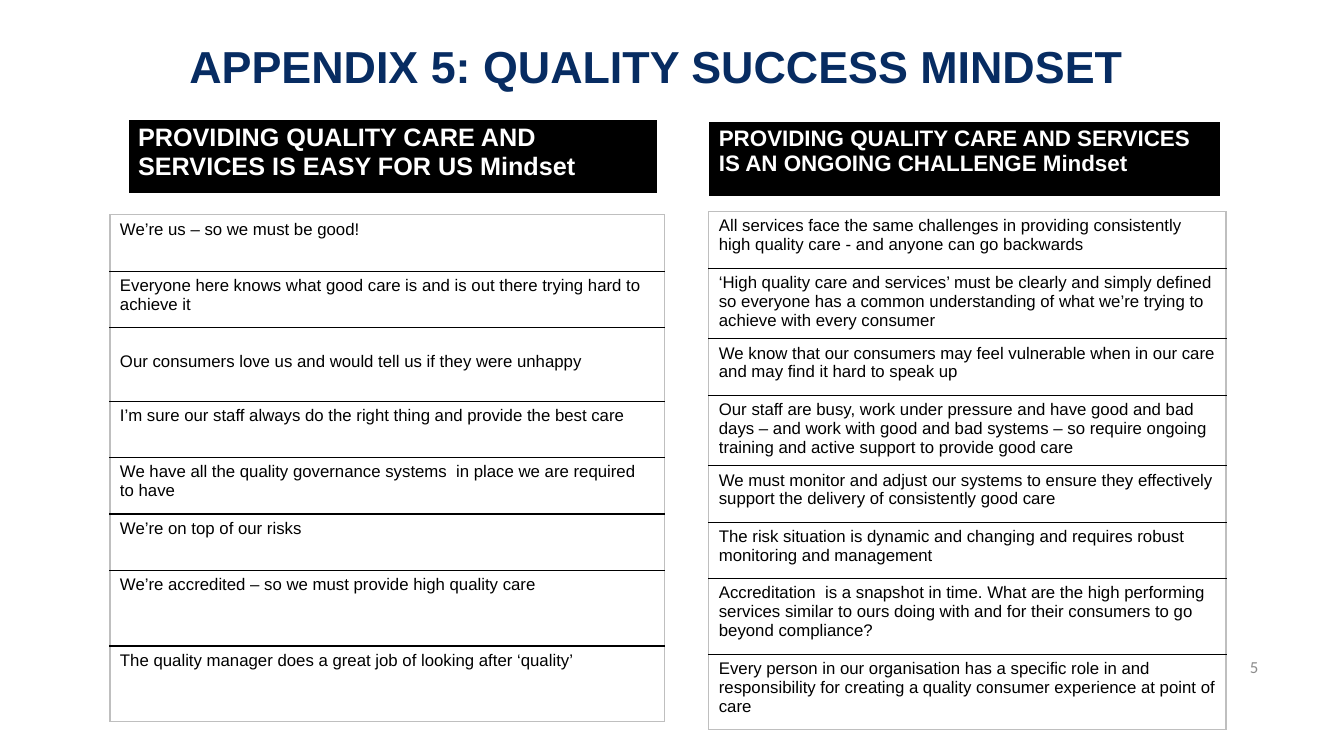
import pptx
import pptx.dml.color
import pptx.enum.text
import pptx.oxml.ns
import pptx.util
from lxml import etree

PX = 9144  # one px is a hundredth of an inch
BLACK, WHITE, GREY, NAVY = "000000", "FFFFFF", "BFBFBF", "072C62"
ALIGN = pptx.enum.text.PP_ALIGN
ANCHOR = pptx.enum.text.MSO_ANCHOR

EASY_MINDSET = [
    (56, "We’re us – so we must be good!"),
    (56, "Everyone here knows what good care is and is out there trying hard to achieve it"),
    (73, "Our consumers love us and would tell us if they were unhappy"),
    (56, "I’m sure our staff always do the right thing and provide the best care"),
    (56, "We have all the quality governance systems  in place we are required to have"),
    (56, "We’re on top of our risks"),
    (75, "We’re accredited – so we must provide high quality care"),
    (75, "The quality manager does a great job of looking after ‘quality’"),
]
CHALLENGE_MINDSET = [
    (56, "All services face the same challenges in providing consistently high quality care "
         "- and anyone can go backwards"),
    (56, "‘High quality care and services’ must be clearly and simply defined so everyone has "
         "a common understanding of what we’re trying to achieve with every consumer"),
    (56, "We know that our consumers may feel vulnerable when in our care and may find it hard "
         "to speak up"),
    (67, "Our staff are busy, work under pressure and have good and bad days – and work with "
         "good and bad systems – so require ongoing training and active support to provide "
         "good care"),
    (56, "We must monitor and adjust our systems to ensure they effectively support the "
         "delivery of consistently good care"),
    (56, "The risk situation is dynamic and changing and requires robust monitoring and "
         "management"),
    (75, "Accreditation  is a snapshot in time. What are the high performing services similar "
         "to ours doing with and for their consumers to go beyond compliance?"),
    (75, "Every person in our organisation has a specific role in and responsibility for "
         "creating a quality consumer experience at point of care"),
]


def rgb(colour):
    return pptx.dml.color.RGBColor.from_string(colour)


def emu(box):
    return [length * PX for length in box]


def write(frame, text, size, colour, align=ALIGN.LEFT, **font_format):
    paragraph = frame.paragraphs[0]
    paragraph.alignment = align
    run = paragraph.add_run()
    run.text = text
    font_format = {"name": "Arial", "size": pptx.util.Pt(size), **font_format}
    for attribute, value in font_format.items():
        setattr(run.font, attribute, value)
    run.font.color.rgb = rgb(colour)


def add_label(slide, box, text, size, colour, align, **font_format):
    frame = slide.shapes.add_textbox(*emu(box)).text_frame
    frame.word_wrap = True
    frame.vertical_anchor = ANCHOR.MIDDLE
    write(frame, text, size, colour, align, **font_format)


def set_borders(cell, borders):
    """Takes (colour, points) for the left, right, top and bottom sides."""
    properties = cell._tc.get_or_add_tcPr()
    qn = pptx.oxml.ns.qn
    for side, (colour, width) in zip("LRTB", borders):
        line = etree.SubElement(properties, qn(f"a:ln{side}"), w=str(pptx.util.Pt(width)))
        fill = etree.SubElement(line, qn("a:solidFill"))
        etree.SubElement(fill, qn("a:srgbClr"), val=colour)


def add_column(slide, box, row_heights):
    """Adds a plain table of one column and returns its cells."""
    table = slide.shapes.add_table(len(row_heights), 1, *emu(box)).table
    for flag in ("first_row", "horz_banding"):
        setattr(table, flag, False)
    for row, height in zip(table.rows, row_heights):
        row.height = height * PX
    return [row.cells[0] for row in table.rows]


def add_heading(slide, box, text, size):
    [cell] = add_column(slide, box, [box[3]])
    set_borders(cell, [(WHITE, 1)] * 3 + [(WHITE, 3)])
    cell.fill.solid()
    cell.fill.fore_color.rgb = rgb(BLACK)
    write(cell.text_frame, text, size, WHITE, bold=True)


def add_statements(slide, left, top, width, statements, lowered_row=None):
    heights = [height for height, _ in statements]
    cells = add_column(slide, (left, top, width, sum(heights)), heights)
    last = len(cells) - 1
    outer, inner = (GREY, 1), (BLACK, 1)
    for index, (cell, (_, text)) in enumerate(zip(cells, statements)):
        set_borders(cell, [outer, outer,
                           outer if index == 0 else inner,
                           outer if index == last else inner])
        cell.fill.background()
        if index == lowered_row:
            cell.margin_top = 24 * PX  # starts one line lower
        write(cell.text_frame, text, 12, BLACK)


def build_mindset_slide(presentation):
    slide = presentation.slides.add_slide(presentation.slide_layouts[6])

    # Page number
    add_label(slide, (1198, 642, 60, 40), "5", 12, "8C8C8C", ALIGN.RIGHT, name="Calibri")

    # Left: the easy mindset
    add_statements(slide, 109, 213, 550, EASY_MINDSET, lowered_row=2)
    add_heading(slide, (127, 118, 525, 75),
                "PROVIDING QUALITY CARE AND SERVICES IS EASY FOR US Mindset", 18)

    # Right: the ongoing challenge mindset
    add_statements(slide, 703, 210, 513, CHALLENGE_MINDSET)
    add_heading(slide, (703, 120, 508, 76),
                "PROVIDING QUALITY CARE AND SERVICES IS AN ONGOING CHALLENGE Mindset", 16)

    # Title
    add_label(slide, (103, 25, 1096, 80), "APPENDIX 5: QUALITY SUCCESS MINDSET",
              32, NAVY, ALIGN.CENTER, bold=True)


def main():
    presentation = pptx.Presentation()
    presentation.slide_width, presentation.slide_height = emu((1333, 750))
    build_mindset_slide(presentation)
    presentation.save("out.pptx")


if __name__ == "__main__":
    main()
